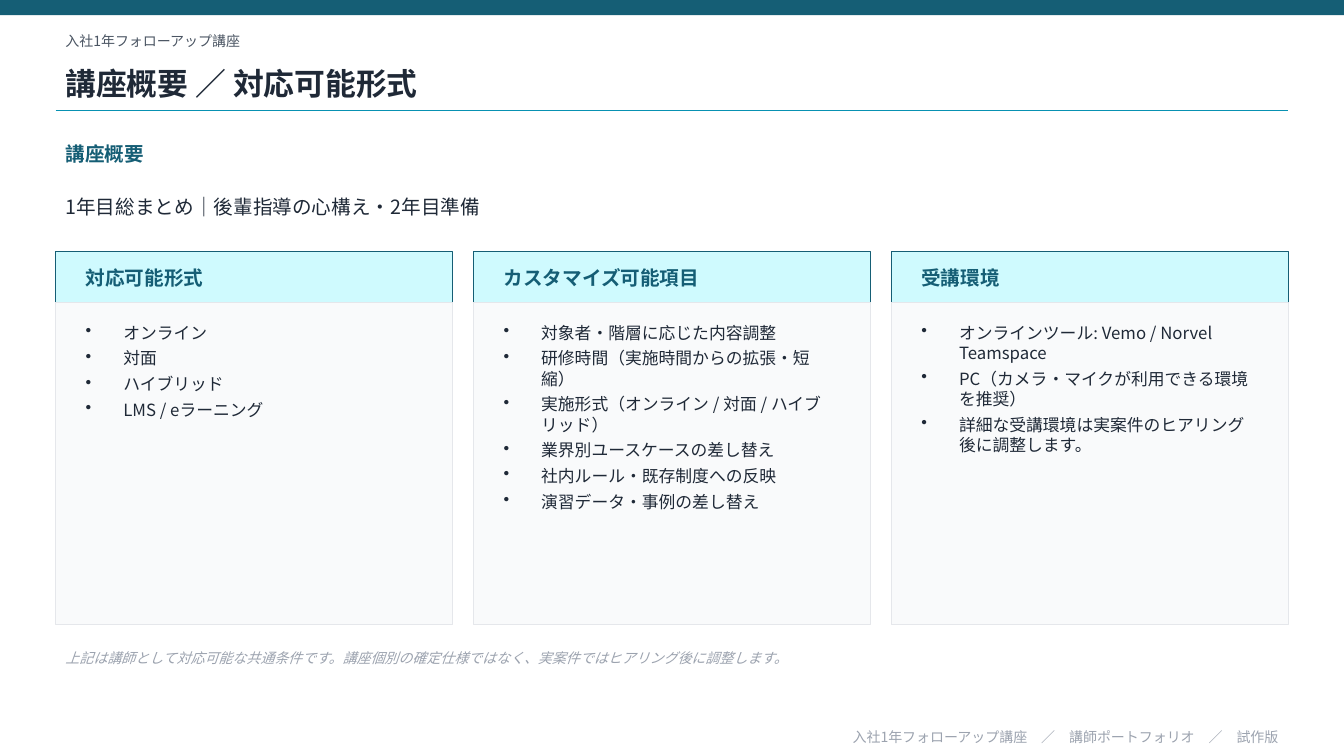
"""Build the course overview slide with three detail cards."""
from dataclasses import dataclass

from lxml.etree import SubElement
from pptx import Presentation
from pptx.dml.color import RGBColor
from pptx.enum.shapes import MSO_CONNECTOR as Link, MSO_SHAPE as Kind
from pptx.enum.text import MSO_ANCHOR as Anchor, PP_ALIGN as Align
from pptx.oxml.ns import qn
from pptx.slide import Slide
from pptx.text.text import TextFrame
from pptx.util import Cm, Pt

FONT = "Noto Sans CJK JP"
TEAL = RGBColor(0x15, 0x5E, 0x75)
CYAN = RGBColor(0x08, 0x91, 0xB2)
PALE = RGBColor(0xCF, 0xFA, 0xFE)
INK = RGBColor(0x1F, 0x29, 0x37)
SLATE = RGBColor(0x4B, 0x55, 0x63)
MUTED = RGBColor(0x9C, 0xA3, 0xAF)
PANEL = RGBColor(0xF9, 0xFA, 0xFB)
EDGE = RGBColor(0xE5, 0xE7, 0xEB)

WIDTH, HEIGHT = 33.87, 19.05
LEFT, SPAN = 1.4, 31.06
CARD, GAP, INSET = 10.01, 0.52, 0.51
HEAD_TOP, HEAD = 6.35, 1.27
BODY_TOP, BODY = 7.62, 8.13
INDENT = 0.95


@dataclass
class Box:
    left: float
    top: float
    width: float
    height: float


@dataclass
class Style:
    size: float
    color: RGBColor
    bold: bool = False
    italic: bool = False


@dataclass
class Label:
    text: str
    top: float
    height: float
    style: Style
    align: Align = Align.LEFT


@dataclass
class Card:
    title: str
    items: list[str]


TITLE = Style(14, TEAL, bold=True)
ITEM = Style(12, INK)

LABELS = [
    Label("入社1年フォローアップ講座", 0.64, 0.76, Style(10, SLATE)),
    Label("講座概要 ／ 対応可能形式", 1.4, 1.4, Style(22, INK, bold=True)),
    Label("講座概要", 3.43, 0.89, TITLE),
    Label("1年目総まとめ｜後輩指導の心構え・2年目準備", 4.45, 1.52, Style(14, INK)),
    Label("上記は講師として対応可能な共通条件です。講座個別の確定仕様ではなく、"
          "実案件ではヒアリング後に調整します。", 16.13, 0.89,
          Style(10, MUTED, italic=True)),
    Label("入社1年フォローアップ講座　／　講師ポートフォリオ　／　試作版",
          18.29, 0.56, Style(10, MUTED), Align.RIGHT),
]

CARDS = [
    Card("対応可能形式", ["オンライン", "対面", "ハイブリッド", "LMS / eラーニング"]),
    Card("カスタマイズ可能項目", [
        "対象者・階層に応じた内容調整",
        "研修時間（実施時間からの拡張・短縮）",
        "実施形式（オンライン / 対面 / ハイブリッド）",
        "業界別ユースケースの差し替え",
        "社内ルール・既存制度への反映",
        "演習データ・事例の差し替え",
    ]),
    Card("受講環境", [
        "オンラインツール: Vemo / Norvel Teamspace",
        "PC（カメラ・マイクが利用できる環境を推奨）",
        "詳細な受講環境は実案件のヒアリング後に調整します。",
    ]),
]


def place(box: Box) -> tuple[Cm, Cm, Cm, Cm]:
    """Turn a box into slide lengths."""
    return Cm(box.left), Cm(box.top), Cm(box.width), Cm(box.height)


def add_rect(slide: Slide, box: Box, fill: RGBColor,
             edge: RGBColor | None = None) -> None:
    """Draw a flat rectangle."""
    rect = slide.shapes.add_shape(Kind.RECTANGLE, *place(box))
    rect.shadow.inherit = False
    rect.fill.solid()
    rect.fill.fore_color.rgb = fill
    if edge is None:
        rect.line.fill.background()
    else:
        rect.line.color.rgb = edge
        rect.line.width = Pt(0.75)


def add_frame(slide: Slide, box: Box, anchor: Anchor) -> TextFrame:
    """Add a wrapping text box."""
    frame = slide.shapes.add_textbox(*place(box)).text_frame
    frame.word_wrap = True
    frame.vertical_anchor = anchor
    return frame


def add_run(para, text: str, style: Style) -> None:
    """Add one styled run to a paragraph."""
    run = para.add_run()
    run.text = text
    font = run.font
    font.name = FONT
    font.size = Pt(style.size)
    font.bold = style.bold
    font.italic = style.italic
    font.color.rgb = style.color
    SubElement(run._r.get_or_add_rPr(), qn("a:ea"), typeface=FONT)


def add_label(slide: Slide, box: Box, text: str, style: Style,
              align: Align = Align.LEFT) -> None:
    """Add a single line of text centred in its height."""
    para = add_frame(slide, box, Anchor.MIDDLE).paragraphs[0]
    para.alignment = align
    add_run(para, text, style)


def add_list(slide: Slide, box: Box, items: list[str]) -> None:
    """Add a bulleted list."""
    frame = add_frame(slide, box, Anchor.TOP)
    for pos, item in enumerate(items):
        para = frame.add_paragraph() if pos else frame.paragraphs[0]
        props = para._p.get_or_add_pPr()
        props.set("marL", str(Cm(INDENT)))
        props.set("indent", str(-Cm(INDENT)))
        SubElement(props, qn("a:buChar"), char="•")
        para.space_after = Pt(4)
        add_run(para, item, ITEM)


def add_card(slide: Slide, card: Card, left: float) -> None:
    """Draw a card with its heading and list."""
    inner, width = left + INSET, CARD - 2 * INSET
    add_rect(slide, Box(left, HEAD_TOP, CARD, HEAD), PALE, TEAL)
    add_label(slide, Box(inner, HEAD_TOP, width, HEAD), card.title, TITLE)
    add_rect(slide, Box(left, BODY_TOP, CARD, BODY), PANEL, EDGE)
    add_list(slide, Box(inner, BODY_TOP + 0.38, width, 7.24), card.items)


def add_rule(slide: Slide, top: float) -> None:
    """Draw the line under the title."""
    rule = slide.shapes.add_connector(
        Link.STRAIGHT, Cm(LEFT), Cm(top), Cm(LEFT + SPAN), Cm(top))
    rule.line.color.rgb = CYAN
    rule.line.width = Pt(1)
    SubElement(rule._element.spPr, qn("a:effectLst"))


def main() -> None:
    """Build and save the slide."""
    deck = Presentation()
    deck.slide_width, deck.slide_height = Cm(WIDTH), Cm(HEIGHT)
    slide = deck.slides.add_slide(deck.slide_layouts[6])
    add_rect(slide, Box(0, 0, WIDTH, 0.38), TEAL)
    add_rule(slide, 2.79)
    for label in LABELS:
        add_label(slide, Box(LEFT, label.top, SPAN, label.height),
                  label.text, label.style, label.align)
    for pos, card in enumerate(CARDS):
        add_card(slide, card, LEFT + pos * (CARD + GAP))
    deck.save("out.pptx")


if __name__ == "__main__":
    main()
